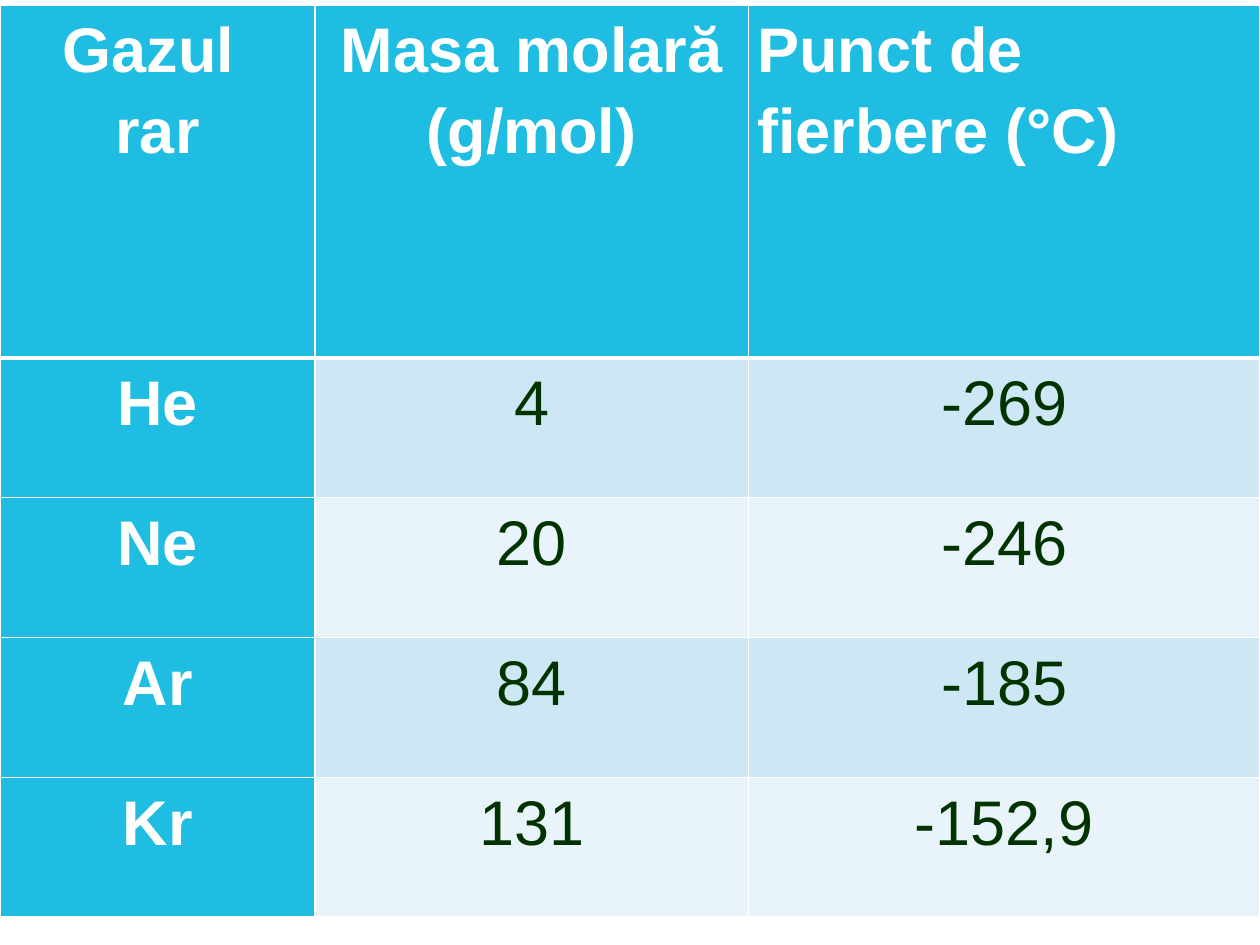
from dataclasses import dataclass

from lxml.etree import SubElement
from pptx import Presentation
from pptx.dml.color import RGBColor
from pptx.enum.text import PP_ALIGN as Align
from pptx.oxml.ns import qn
from pptx.table import _Cell as Cell
from pptx.util import Inches, Pt


@dataclass(frozen=True)
class Theme:
    font: str = "Arial"
    size: float = 36
    line_spacing: float = 1.15
    accent: str = "1EBDE1"
    bands: tuple[str, str] = ("CDE8F4", "E8F4F9")
    light: str = "FFFFFF"
    dark: str = "003300"
    thin: float = 1
    thick: float = 3


@dataclass(frozen=True)
class Line:
    text: str
    align: Align = Align.CENTER
    indent: float = 0


THEME = Theme()
SLIDE_WIDTH, SLIDE_HEIGHT = 10, 7.5
TABLE_TOP = 0.04
COLUMN_SHARES = (0.25, 0.344, 0.406)
HEADER_HEIGHT, GAS_HEIGHT = 2.8, 1.11

HEADER = (
    (Line("Gazul", Align.LEFT, indent=0.43), Line("rar")),
    (Line("Masa molară"), Line("(g/mol)")),
    (Line("Punct de fierbere (°C)", Align.LEFT),),
)
GASES = (
    ("He", "4", "-269"),
    ("Ne", "20", "-246"),
    ("Ar", "84", "-185"),
    ("Kr", "131", "-152,9"),
)


def write_lines(cell: Cell, lines: tuple[Line, ...], color: str, bold: bool) -> None:
    frame = cell.text_frame
    for number, line in enumerate(lines):
        para = frame.add_paragraph() if number else frame.paragraphs[0]
        para.alignment = line.align
        para.line_spacing = THEME.line_spacing
        if line.indent:
            para._p.get_or_add_pPr().set("marL", str(Inches(line.indent)))
        span = para.add_run()
        span.text = line.text
        formats = {"name": THEME.font, "size": Pt(THEME.size), "bold": bold}
        for name, value in formats.items():
            setattr(span.font, name, value)
        span.font.color.rgb = RGBColor.from_string(color)


def draw_borders(cell: Cell, top: float, bottom: float) -> None:
    properties = cell._tc.get_or_add_tcPr()
    widths = {"lnL": THEME.thin, "lnR": THEME.thin, "lnT": top, "lnB": bottom}
    for side, width in widths.items():
        border = SubElement(properties, qn(f"a:{side}"), w=str(Pt(width)))
        fill = SubElement(border, qn("a:solidFill"))
        SubElement(fill, qn("a:srgbClr"), val=THEME.light)


def draw_cell(cell: Cell, lines: tuple[Line, ...], row: int, column: int) -> None:
    margins = {"margin_left": 0.07, "margin_right": 0.07,
               "margin_top": 0, "margin_bottom": 0}
    for name, value in margins.items():
        setattr(cell, name, Inches(value))
    heading = row == 0 or column == 0
    write_lines(cell, lines, THEME.light if heading else THEME.dark, heading)
    # The header row is set off by a thick rule
    draw_borders(cell,
                 top=THEME.thick if row == 1 else THEME.thin,
                 bottom=THEME.thick if row == 0 else THEME.thin)
    cell.fill.solid()
    color = THEME.accent if heading else THEME.bands[(row - 1) % 2]
    cell.fill.fore_color.rgb = RGBColor.from_string(color)


def main() -> None:
    deck = Presentation()
    deck.slide_width, deck.slide_height = Inches(SLIDE_WIDTH), Inches(SLIDE_HEIGHT)
    page = deck.slides.add_slide(deck.slide_layouts[6])

    # Table grid
    rows = [HEADER] + [tuple((Line(text),) for text in gas) for gas in GASES]
    heights = [HEADER_HEIGHT] + [GAS_HEIGHT] * len(GASES)
    table = page.shapes.add_table(
        len(rows), len(COLUMN_SHARES), 0, Inches(TABLE_TOP),
        Inches(SLIDE_WIDTH), Inches(sum(heights))).table
    for column, share in zip(table.columns, COLUMN_SHARES):
        column.width = Inches(SLIDE_WIDTH * share)
    for row, height in zip(table.rows, heights):
        row.height = Inches(height)

    # Table contents
    for row_number, row in enumerate(rows):
        for column_number, lines in enumerate(row):
            draw_cell(table.cell(row_number, column_number), lines,
                      row_number, column_number)

    deck.save("out.pptx")


if __name__ == "__main__":
    main()
